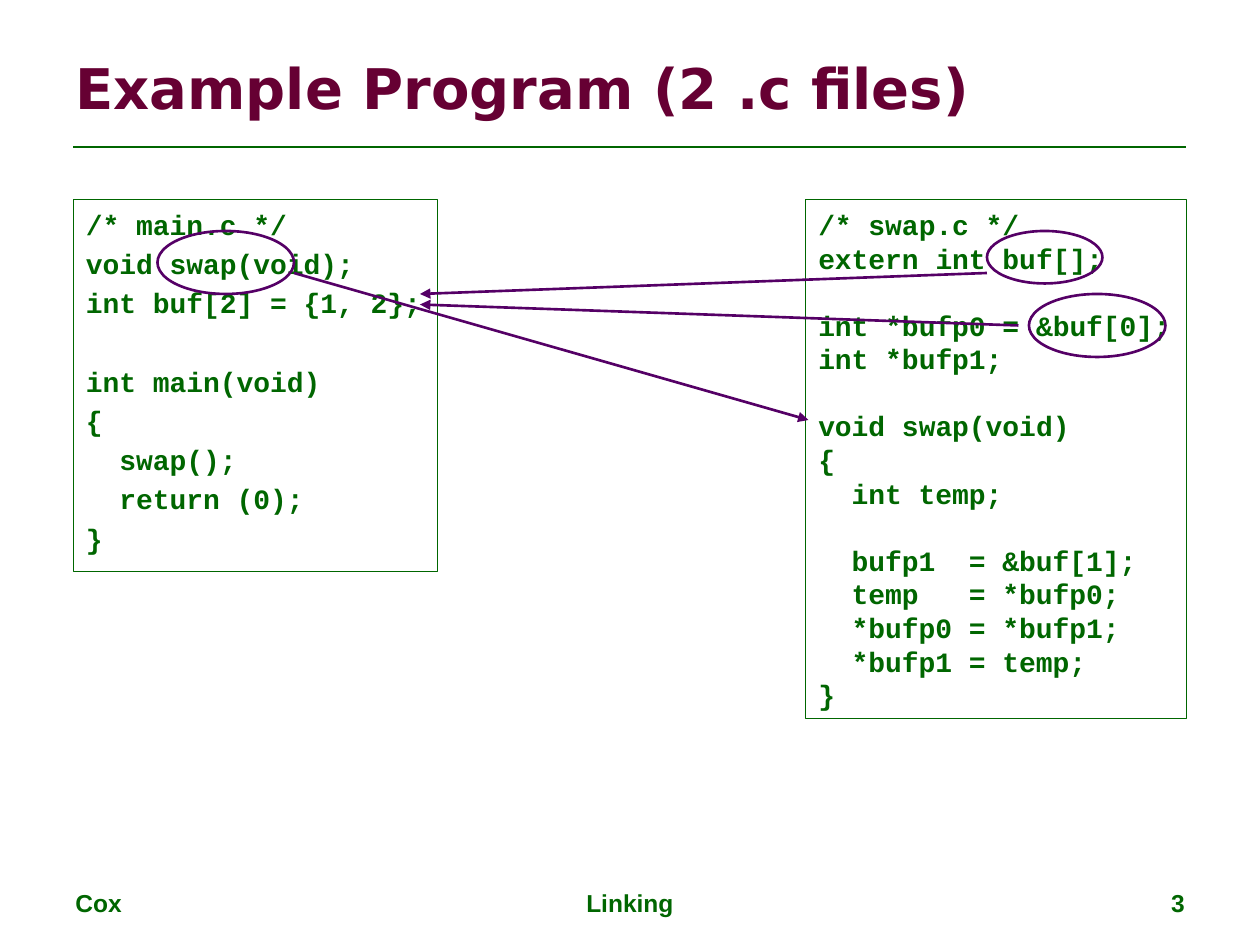
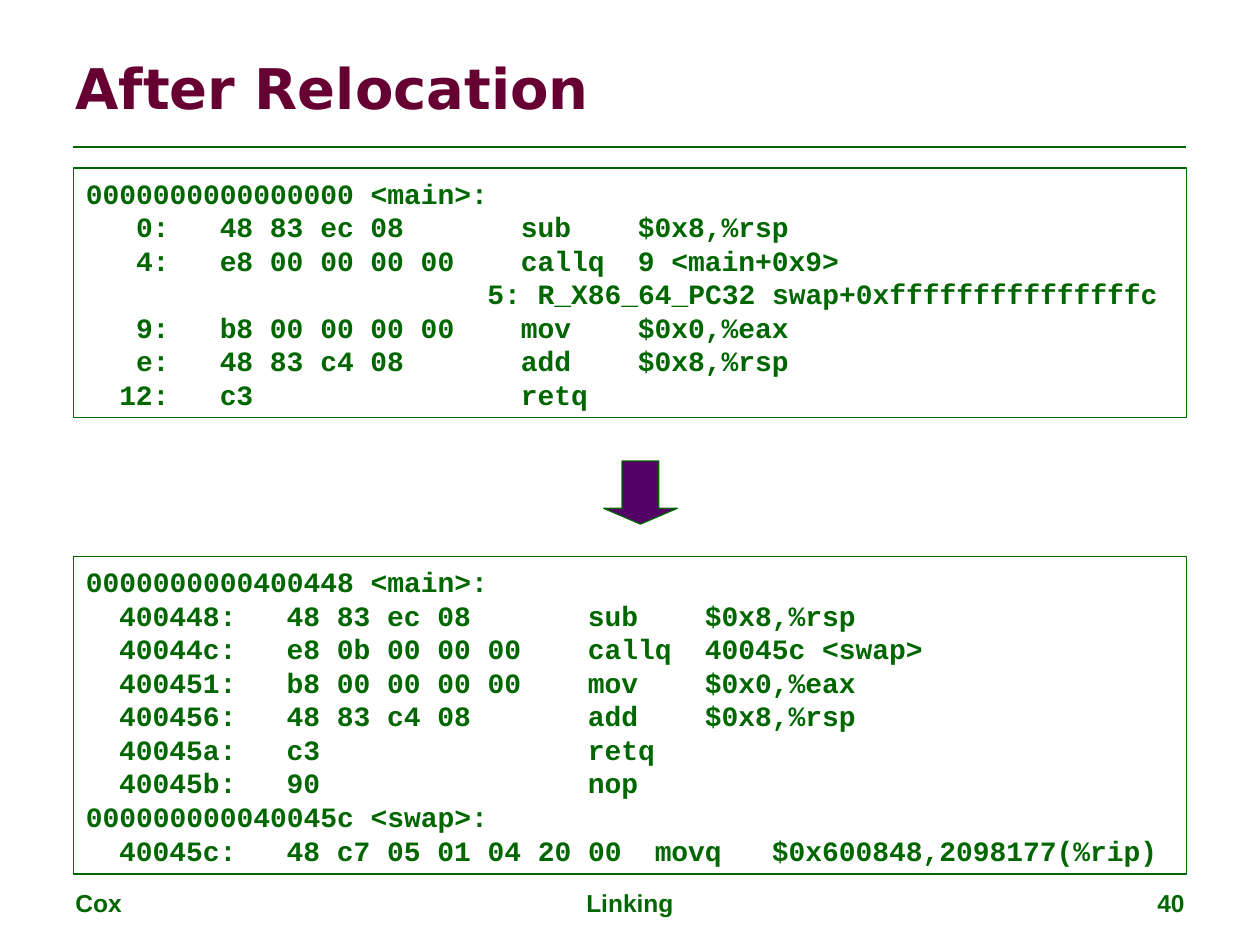
"""Builds two slides on linking: an example program and its relocated code."""
import pptx
import pptx.dml.color
import pptx.enum.shapes
import pptx.enum.text
import pptx.oxml.ns
import pptx.slide
import pptx.util
from dataclasses import dataclass
from lxml import etree

GREEN = "006600"
PURPLE = "550066"
MAROON = "660033"
LEFT, RIGHT, RULE_TOP = 42, 678, 84
FOOTER_TOP, FOOTER_HEIGHT = 504, 25
CHARACTER_WIDTH, LINE_HEIGHT = 9.56, 19.2

Pt = pptx.util.Pt
Align = pptx.enum.text.PP_ALIGN
Anchor = pptx.enum.text.MSO_ANCHOR
Preset = pptx.enum.shapes.MSO_SHAPE

TITLE_FONT = {"name": "DejaVu Sans", "size": Pt(32), "bold": True}
FOOTER_FONT = {"name": "Arial", "size": Pt(14), "bold": True}
CODE_FONT = {"name": "Courier New", "size": Pt(16), "bold": True}
CODE_FRAME = {"word_wrap": True, "vertical_anchor": Anchor.TOP,
              "margin_top": Pt(4.6), "margin_bottom": Pt(2.6)}


@dataclass(frozen=True)
class Box:
    """A rectangle in points."""
    left: float
    top: float
    width: float
    height: float


@dataclass(frozen=True)
class CodeLine:
    """A line of code with tab columns and the blank lines above it."""
    text: str
    columns: tuple[int, ...] = ()
    blank_above: int = 0
    first_align: str = "l"


@dataclass(frozen=True)
class Arrow:
    """A line from one point to another."""
    start: tuple[float, float]
    end: tuple[float, float]


def instruction(text: str, *columns: int) -> CodeLine:
    """Makes a disassembly row whose address is right-aligned."""
    return CodeLine("\t" + text, columns, first_align="r")


MAIN_SOURCE = [
    CodeLine("/* main.c */"),
    CodeLine("void swap(void);"),
    CodeLine("int buf[2] = {1, 2};"),
    CodeLine("int main(void)", blank_above=1),
    CodeLine("{"),
    CodeLine("\tswap();", (2,)),
    CodeLine("\treturn (0);", (2,)),
    CodeLine("}"),
]
SWAP_SOURCE = [
    CodeLine("/* swap.c */"),
    CodeLine("extern int buf[];"),
    CodeLine("int *bufp0 = &buf[0];", blank_above=1),
    CodeLine("int *bufp1;"),
    CodeLine("void swap(void)", blank_above=1),
    CodeLine("{"),
    CodeLine("\tint temp;", (2,)),
    CodeLine("\tbufp1\t= &buf[1];", (2, 9), blank_above=1),
    CodeLine("\ttemp\t= *bufp0;", (2, 9)),
    CodeLine("\t*bufp0\t= *bufp1;", (2, 9)),
    CodeLine("\t*bufp1\t= temp;", (2, 9)),
    CodeLine("}"),
]
OBJECT_COLUMNS = (5, 8, 26, 33)
OBJECT_CODE = [
    CodeLine("0000000000000000 <main>:"),
    instruction("0:\t48 83 ec 08\tsub\t$0x8,%rsp", *OBJECT_COLUMNS),
    instruction("4:\te8 00 00 00 00\tcallq\t9 <main+0x9>", *OBJECT_COLUMNS),
    CodeLine("\t5: R_X86_64_PC32 swap+0xfffffffffffffffc", (24,)),
    instruction("9:\tb8 00 00 00 00\tmov\t$0x0,%eax", *OBJECT_COLUMNS),
    instruction("e:\t48 83 c4 08\tadd\t$0x8,%rsp", *OBJECT_COLUMNS),
    instruction("12:\tc3\tretq", *OBJECT_COLUMNS),
]
LINKED_COLUMNS = (9, 12, 30, 37)
LINKED_CODE = [
    CodeLine("0000000000400448 <main>:"),
    instruction("400448:\t48 83 ec 08\tsub\t$0x8,%rsp", *LINKED_COLUMNS),
    instruction("40044c:\te8 0b 00 00 00\tcallq\t40045c <swap>", *LINKED_COLUMNS),
    instruction("400451:\tb8 00 00 00 00\tmov\t$0x0,%eax", *LINKED_COLUMNS),
    instruction("400456:\t48 83 c4 08\tadd\t$0x8,%rsp", *LINKED_COLUMNS),
    instruction("40045a:\tc3\tretq", *LINKED_COLUMNS),
    instruction("40045b:\t90\tnop", *LINKED_COLUMNS),
    CodeLine("000000000040045c <swap>:"),
    instruction("40045c:\t48 c7 05 01 04 20 00\tmovq\t$0x600848,2098177(%rip)",
                9, 12, 34, 41),
]
SYMBOL_RINGS = [Box(90, 132, 78, 36), Box(588, 168, 78, 36), Box(564, 132, 66, 30)]
REFERENCE_ARROWS = [
    Arrow((168, 156), (462, 240)),
    Arrow((564, 156), (240, 168)),
    Arrow((582, 186), (240, 174)),
]


def color(value: str) -> pptx.dml.color.RGBColor:
    """Turns a hex string into a colour."""
    return pptx.dml.color.RGBColor.from_string(value)


def apply_format(target: object, values: dict) -> None:
    """Sets each named attribute on the target."""
    for name, value in values.items():
        setattr(target, name, value)


def place(box: Box) -> tuple:
    """Gives the position and size of a box as lengths."""
    return Pt(box.left), Pt(box.top), Pt(box.width), Pt(box.height)


def write(paragraph, text: str, font: dict, ink: str) -> None:
    """Adds one formatted run to a paragraph."""
    run = paragraph.add_run()
    run.text = text
    apply_format(run.font, font)
    run.font.color.rgb = color(ink)


def add_label(slide: pptx.slide.Slide, box: Box, text: str, font: dict,
              ink: str, align: Align = Align.LEFT, anchor: Anchor = Anchor.TOP) -> None:
    """Adds a text box with a single line."""
    frame = slide.shapes.add_textbox(*place(box)).text_frame
    apply_format(frame, {"word_wrap": True, "vertical_anchor": anchor})
    frame.paragraphs[0].alignment = align
    write(frame.paragraphs[0], text, font, ink)


def add_outline(slide: pptx.slide.Slide, preset: Preset, box: Box, ink: str,
                width: float, fill: str | None = None):
    """Adds an outlined preset shape, filled when a fill is given."""
    shape = slide.shapes.add_shape(preset, *place(box))
    shape.shadow.inherit = False
    if fill:
        shape.fill.solid()
        shape.fill.fore_color.rgb = color(fill)
    else:
        shape.fill.background()
    shape.line.color.rgb = color(ink)
    shape.line.width = Pt(width)
    return shape


def add_line(slide: pptx.slide.Slide, line: Arrow, ink: str, arrowhead: bool = False) -> None:
    """Adds a straight line, with an arrowhead at its end if asked."""
    connector = slide.shapes.add_connector(
        pptx.enum.shapes.MSO_CONNECTOR.STRAIGHT,
        *(Pt(value) for value in (*line.start, *line.end)))
    connector.line.color.rgb = color(ink)
    connector.line.width = Pt(1.5)
    properties = connector._element.spPr
    if arrowhead:
        outline = properties.find(pptx.oxml.ns.qn("a:ln"))
        etree.SubElement(outline, pptx.oxml.ns.qn("a:tailEnd"), type="triangle")
    etree.SubElement(properties, pptx.oxml.ns.qn("a:effectLst"))


def add_tab_stops(paragraph, line: CodeLine) -> None:
    """Sets the tab stops of a code line from its character columns."""
    properties = paragraph._p.get_or_add_pPr()
    stops = etree.SubElement(properties, pptx.oxml.ns.qn("a:tabLst"))
    for index, column in enumerate(line.columns):
        etree.SubElement(stops, pptx.oxml.ns.qn("a:tab"),
                         pos=str(Pt(column * CHARACTER_WIDTH)),
                         algn="l" if index else line.first_align)


def add_code(slide: pptx.slide.Slide, box: Box, lines: list[CodeLine],
             spacing: float = 0) -> None:
    """Adds a framed listing."""
    frame = add_outline(slide, Preset.RECTANGLE, box, GREEN, 0.75).text_frame
    apply_format(frame, CODE_FRAME)
    for index, line in enumerate(lines):
        paragraph = frame.add_paragraph() if index else frame.paragraphs[0]
        gap = spacing + line.blank_above * (LINE_HEIGHT + spacing)
        apply_format(paragraph, {"alignment": Align.LEFT,
                                 "line_spacing": Pt(LINE_HEIGHT),
                                 "space_before": Pt(gap if index else 0)})
        if line.columns:
            add_tab_stops(paragraph, line)
        write(paragraph, line.text, CODE_FONT, GREEN)


def add_base_slide(presentation, title: str, number: int) -> pptx.slide.Slide:
    """Adds a blank slide with the shared title, rule and footers."""
    slide = presentation.slides.add_slide(presentation.slide_layouts[6])
    add_line(slide, Arrow((LEFT, RULE_TOP), (RIGHT, RULE_TOP)), GREEN)
    footers = [(36, 168, "Cox", Align.LEFT), (246, 228, "Linking", Align.CENTER),
               (516, 168, str(number), Align.RIGHT)]
    for left, width, text, align in footers:
        add_label(slide, Box(left, FOOTER_TOP, width, FOOTER_HEIGHT), text,
                  FOOTER_FONT, GREEN, align)
    add_label(slide, Box(36, 21.6, 648, 56), title, TITLE_FONT, MAROON,
              anchor=Anchor.MIDDLE)
    return slide


def add_program_slide(presentation) -> None:
    """Adds the two source files and their symbol references."""
    slide = add_base_slide(presentation, "Example Program (2 .c files)", 3)
    add_code(slide, Box(LEFT, 114, 208, 212.4), MAIN_SOURCE, spacing=3.2)
    add_code(slide, Box(RIGHT - 217.5, 114, 217.5, 296.5), SWAP_SOURCE)
    for ring in SYMBOL_RINGS:
        add_outline(slide, Preset.OVAL, ring, PURPLE, 1.5)
    for arrow in REFERENCE_ARROWS:
        add_line(slide, arrow, PURPLE, arrowhead=True)


def add_relocation_slide(presentation) -> None:
    """Adds the code before and after relocation."""
    slide = add_base_slide(presentation, "After Relocation", 40)
    down_arrow = add_outline(slide, Preset.DOWN_ARROW, Box(345, 263.5, 42, 36),
                             GREEN, 0.75, PURPLE)
    down_arrow.adjustments[0] = 0.5
    down_arrow.adjustments[1] = 0.25
    add_code(slide, Box(LEFT, 96, RIGHT - LEFT, 142.5), OBJECT_CODE)
    add_code(slide, Box(LEFT, 318, RIGHT - LEFT, 181.5), LINKED_CODE)


def main() -> None:
    """Builds and saves the presentation."""
    presentation = pptx.Presentation()
    apply_format(presentation, {"slide_width": Pt(720), "slide_height": Pt(540)})
    add_program_slide(presentation)
    add_relocation_slide(presentation)
    presentation.save("out.pptx")


if __name__ == "__main__":
    main()
